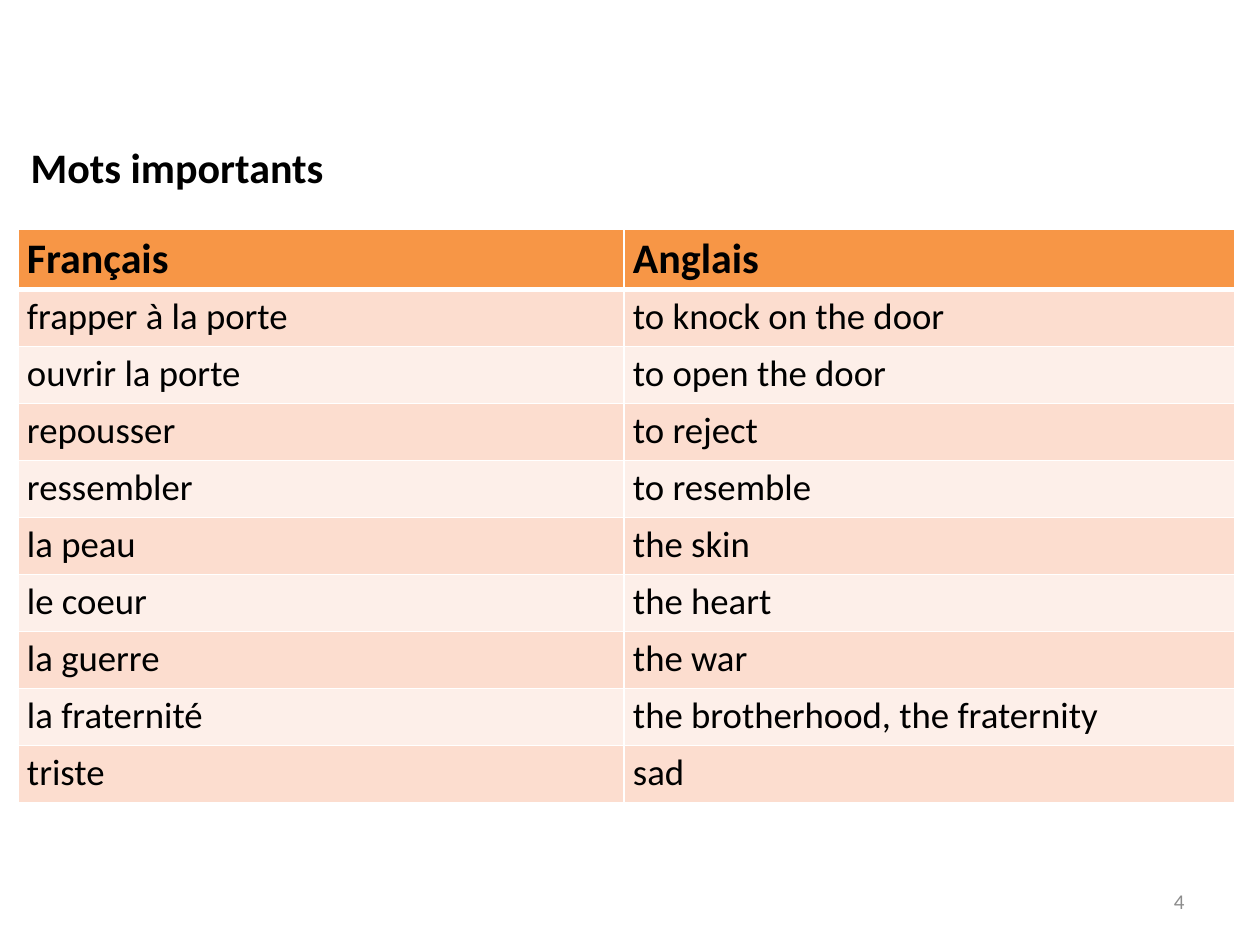
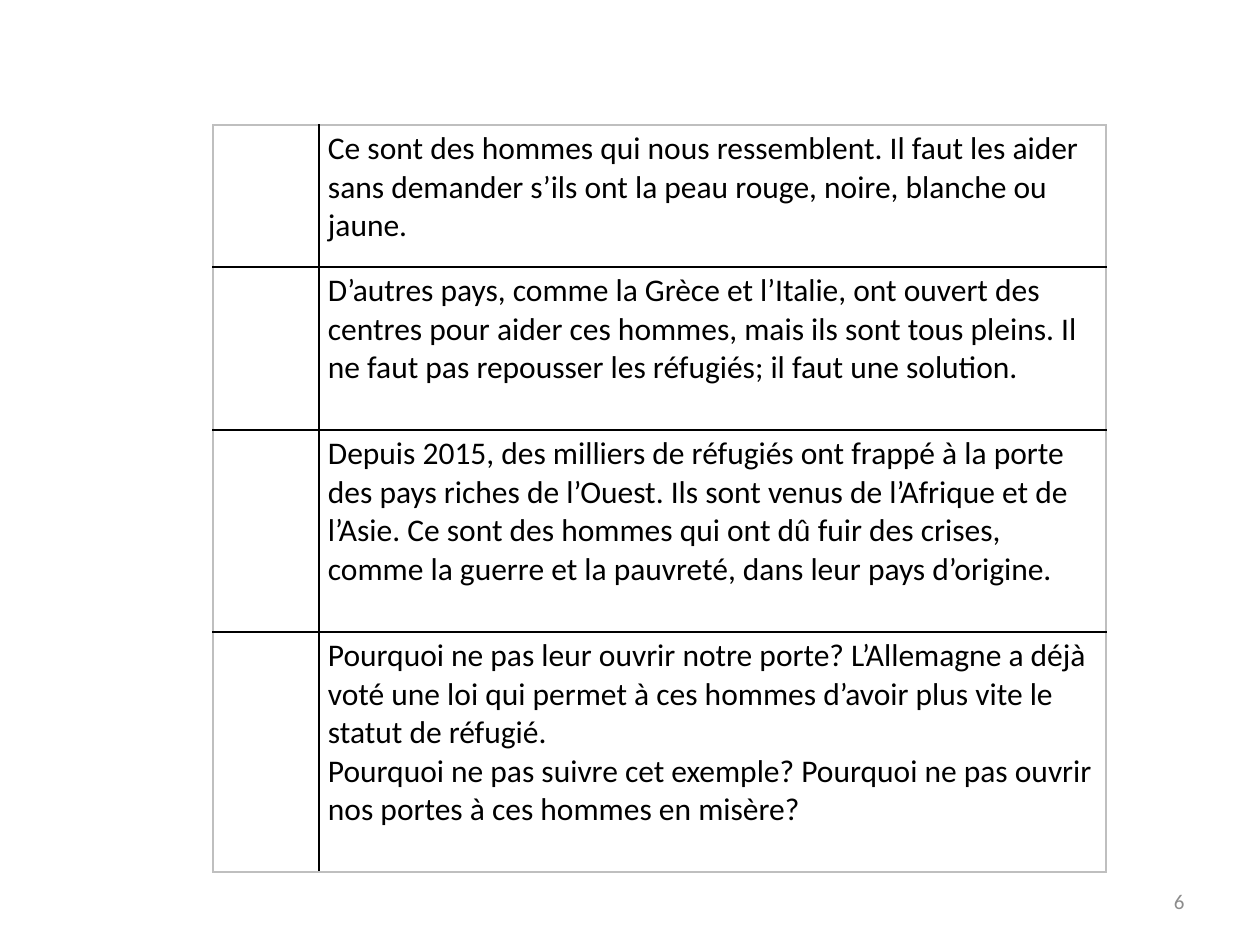
import pptx
import pptx.dml.color
import pptx.enum.text
import pptx.oxml.ns
import pptx.util
from lxml import etree

RGBColor = pptx.dml.color.RGBColor
BLACK = RGBColor(0x00, 0x00, 0x00)
WHITE = RGBColor(0xFF, 0xFF, 0xFF)
GREY_NUMBER = RGBColor(0x8C, 0x8C, 0x8C)
GREY_EDGE = RGBColor(0xBF, 0xBF, 0xBF)
ORANGE = RGBColor(0xF7, 0x96, 0x46)
PEACH = RGBColor(0xFC, 0xDD, 0xCF)
PALE_PEACH = RGBColor(0xFD, 0xEF, 0xE9)

FONT = "Calibri"
PX_PER_INCH = 126
TITLE_ONLY, BLANK = 5, 6

VOCABULARY = [
    ("Français", "Anglais"),
    ("frapper à la porte", "to knock on the door"),
    ("ouvrir la porte", "to open the door"),
    ("repousser", "to reject"),
    ("ressembler", "to resemble"),
    ("la peau", "the skin"),
    ("le coeur", "the heart"),
    ("la guerre", "the war"),
    ("la fraternité", "the brotherhood, the fraternity"),
    ("triste", "sad"),
]

# Each passage: row height in px, then its paragraphs
PASSAGES = [
    (142, ["Ce sont des hommes qui nous ressemblent. Il faut les aider sans "
           "demander s’ils ont la peau rouge, noire, blanche ou jaune."]),
    (163, ["D’autres pays, comme la Grèce et l’Italie, ont ouvert des centres "
           "pour aider ces hommes, mais ils sont tous pleins. Il ne faut pas "
           "repousser les réfugiés; il faut une solution."]),
    (202, ["Depuis 2015, des milliers de réfugiés ont frappé à la porte des "
           "pays riches de l’Ouest. Ils sont venus de l’Afrique et de l’Asie. "
           "Ce sont des hommes qui ont dû fuir des crises, comme la guerre et "
           "la pauvreté, dans leur pays d’origine."]),
    (240, ["Pourquoi ne pas leur ouvrir notre porte? L’Allemagne a déjà voté "
           "une loi qui permet à ces hommes d’avoir plus vite le statut de "
           "réfugié.",
           "Pourquoi ne pas suivre cet exemple? Pourquoi ne pas ouvrir nos "
           "portes à ces hommes en misère?"]),
]


def px(length):
    return pptx.util.Emu(round(length * 914400 / PX_PER_INCH))


class Deck:
    """Shared style and the slide being built."""

    def __init__(self):
        self.presentation = pptx.Presentation()
        self.presentation.slide_width = px(1260)
        self.presentation.slide_height = px(945)
        self.slide = None

    def add_slide(self, layout, number):
        layouts = self.presentation.slide_layouts
        self.slide = self.presentation.slides.add_slide(layouts[layout])
        self.page_number(number)

    def fill_text(self, frame, paragraphs, size, color=BLACK, bold=False,
                  align=pptx.enum.text.PP_ALIGN.LEFT):
        frame.word_wrap = True
        for index, text in enumerate(paragraphs):
            paragraph = frame.add_paragraph() if index else frame.paragraphs[0]
            paragraph.alignment = align
            run = paragraph.add_run()
            run.text = text
            run.font.name = FONT
            run.font.size = pptx.util.Pt(size)
            run.font.bold = bold
            run.font.color.rgb = color

    def title(self, text, left, top, width, height):
        shape = self.slide.shapes.title
        shape.left, shape.top = px(left), px(top)
        shape.width, shape.height = px(width), px(height)
        shape.text_frame.vertical_anchor = pptx.enum.text.MSO_ANCHOR.TOP
        self.fill_text(shape.text_frame, [text], 24, bold=True)

    def page_number(self, number):
        box = self.slide.shapes.add_textbox(px(903), px(876), px(294), px(50))
        box.text_frame.vertical_anchor = pptx.enum.text.MSO_ANCHOR.MIDDLE
        self.fill_text(box.text_frame, [str(number)], 12, GREY_NUMBER,
                       align=pptx.enum.text.PP_ALIGN.RIGHT)

    def table(self, left, top, columns, rows):
        frame = self.slide.shapes.add_table(
            len(rows), len(columns), px(left), px(top),
            px(sum(columns)), px(sum(rows)))
        table = frame.table
        table.first_row = table.horz_banding = False
        for column, width in zip(table.columns, columns):
            column.width = px(width)
        for row, height in zip(table.rows, rows):
            row.height = px(height)
        return table

    def cell(self, cell, paragraphs, size, borders, fill=None, bold=False):
        """Borders map L, R, T and B to a colour and a width in points."""
        cell.margin_left = cell.margin_right = px(9)
        cell.margin_top = cell.margin_bottom = px(5)
        properties = cell._tc.get_or_add_tcPr()
        qn = pptx.oxml.ns.qn
        for side in "LRTB":
            color, width = borders[side]
            line = etree.SubElement(properties, qn("a:ln" + side),
                                    w=str(pptx.util.Pt(width)))
            solid = etree.SubElement(line, qn("a:solidFill"))
            etree.SubElement(solid, qn("a:srgbClr"), val=str(color))
        if fill is None:
            cell.fill.background()
        else:
            cell.fill.solid()
            cell.fill.fore_color.rgb = fill
        self.fill_text(cell.text_frame, paragraphs, size, bold=bold)


def build_vocabulary(deck):
    deck.add_slide(TITLE_ONLY, 4)
    deck.title("Mots importants", 18, 135, 1202, 63)
    rows = [59] + [57] * (len(VOCABULARY) - 1)
    table = deck.table(18, 229, [606, 611], rows)
    for row, words in enumerate(VOCABULARY):
        header = row == 0
        fill = ORANGE if header else (PALE_PEACH, PEACH)[row % 2]
        borders = dict.fromkeys("LRTB", (WHITE, 1))
        if header:
            borders["B"] = (WHITE, 3)
        elif row == 1:
            borders["T"] = (WHITE, 3)
        for column, word in enumerate(words):
            deck.cell(table.cell(row, column), [word], 24 if header else 21,
                      borders, fill, bold=header)


def build_passages(deck):
    deck.add_slide(BLANK, 6)
    table = deck.table(213, 125, [106, 787], [height for height, _ in PASSAGES])
    inner, outer = (BLACK, 1), (GREY_EDGE, 1)
    last = len(PASSAGES) - 1
    for row, (_, paragraphs) in enumerate(PASSAGES):
        for column, content in enumerate([[], paragraphs]):
            borders = {
                "L": inner if column else outer,
                "R": outer if column else inner,
                "T": inner if row else outer,
                "B": outer if row == last else inner,
            }
            deck.cell(table.cell(row, column), content, 18, borders)


def main():
    deck = Deck()
    build_vocabulary(deck)
    build_passages(deck)
    deck.presentation.save("out.pptx")


if __name__ == "__main__":
    main()
